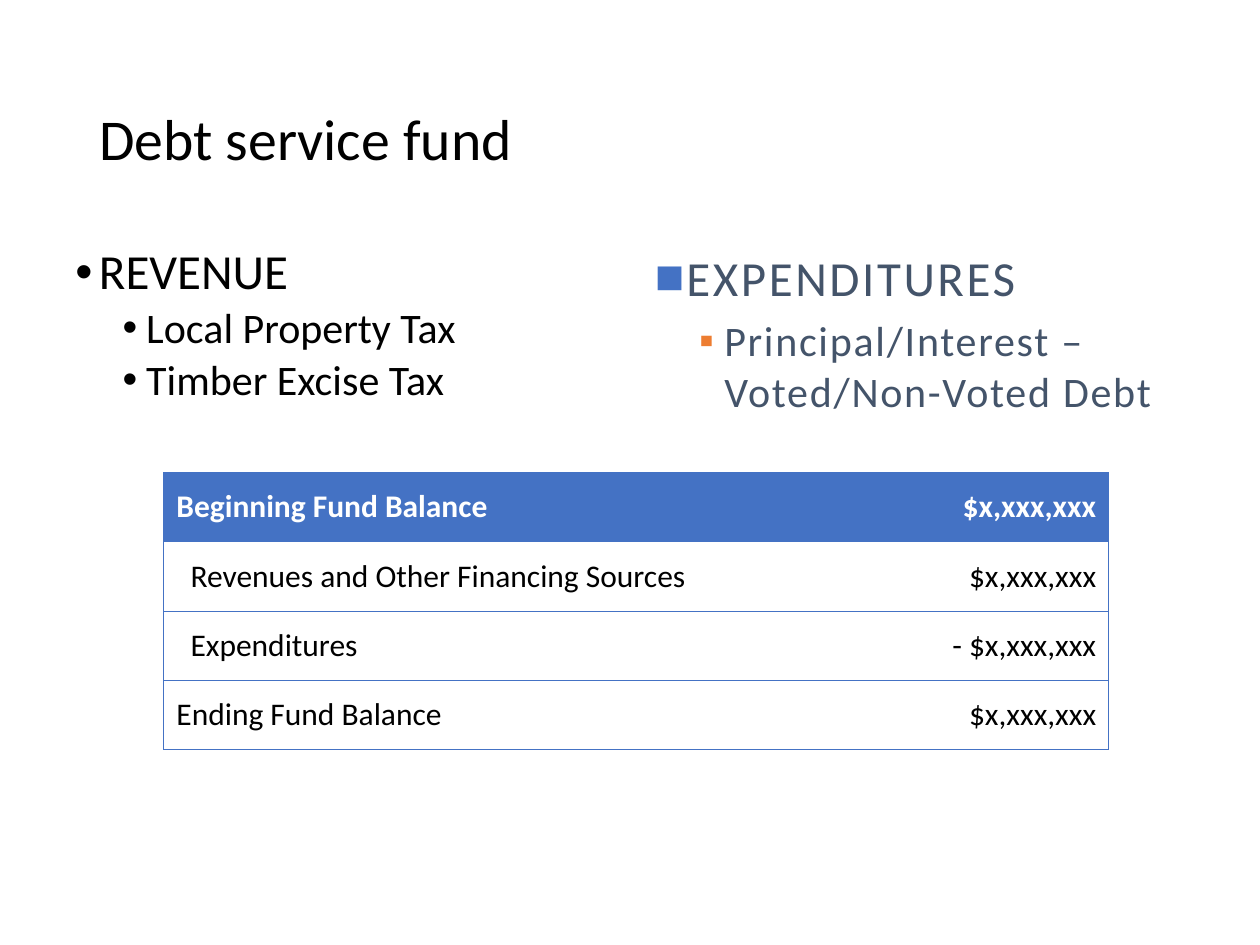
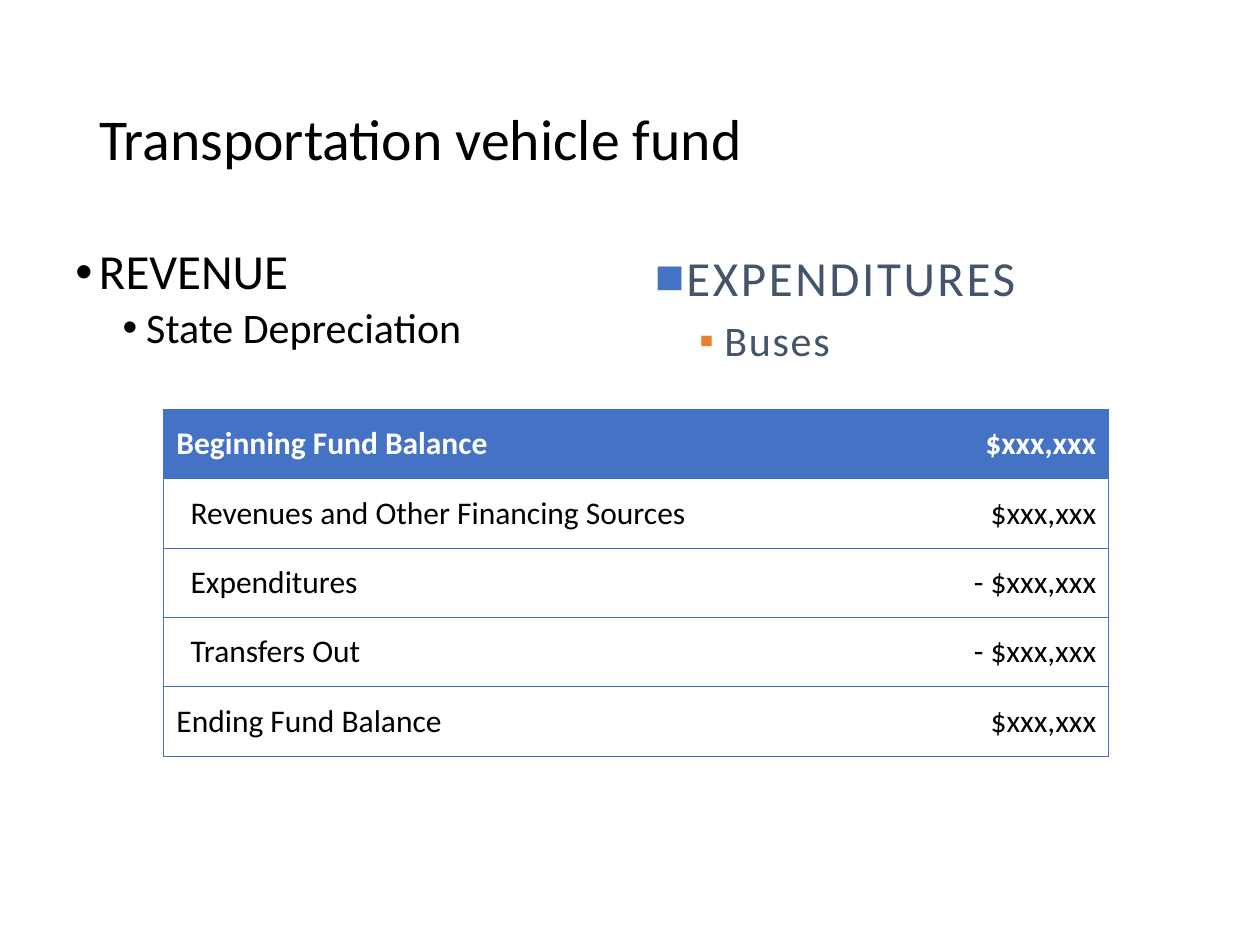
from lxml.etree import SubElement
from pptx import Presentation
from pptx.dml.color import RGBColor
from pptx.enum.text import MSO_ANCHOR, PP_ALIGN
from pptx.oxml.ns import qn
from pptx.util import Pt

BLACK = RGBColor(0x00, 0x00, 0x00)
WHITE = RGBColor(0xFF, 0xFF, 0xFF)
BLUE = RGBColor(0x44, 0x72, 0xC4)
ORANGE = RGBColor(0xED, 0x7D, 0x31)
SLATE = RGBColor(0x44, 0x54, 0x6A)
FONT = "Calibri"

ROW_HEIGHT = 39.6
COLUMN_WIDTHS = (342, 198)
CELL_MARGIN = 7.2
ROW_INDENT = 8.1

# fields: left, text colour, line spacing, then per level:
COLUMN_STYLES = (
    (36, BLACK, 0.9, (
        (28, 13.5, 13.5, 7.5, "•", BLACK, 0),
        (24, 40.5, 13.5, 3.8, "•", BLACK, 0),
    )),
    (363.6, SLATE, 1.0, (
        (28, 21.6, 18, 5.6, "■", BLUE, 150),
        (24, 43.2, 14.4, 4.8, "▪", ORANGE, 100),
    )),
)

FUNDS = (
    ("Debt service fund", 270, "$x,xxx,xxx",
     ("Local Property Tax", "Timber Excise Tax"),
     ("Principal/Interest – Voted/Non-Voted Debt",),
     ("Expenditures",)),
    ("Transportation vehicle fund", 234, "$xxx,xxx",
     ("State Depreciation",),
     ("Buses",),
     ("Expenditures", "Transfers Out")),
)


def add_run(paragraph, text, size, color, bold=False):
    run = paragraph.add_run()
    run.text = text
    run.font.name = FONT
    run.font.size = Pt(size)
    run.font.bold = bold
    run.font.color.rgb = color
    return run


def add_border(cell, side, color):
    line = SubElement(cell._tc.get_or_add_tcPr(), qn(f"a:{side}"), w=str(Pt(0.5)))
    if color is None:
        SubElement(line, qn("a:noFill"))
    else:
        fill = SubElement(line, qn("a:solidFill"))
        SubElement(fill, qn("a:srgbClr"), val=str(color))


presentation = Presentation()
presentation.slide_width = Pt(720)
presentation.slide_height = Pt(540)

for fund, table_top, amount, revenues, expenditures, deductions in FUNDS:
    slide = presentation.slides.add_slide(presentation.slide_layouts[5])
    title = slide.shapes.title
    title.left, title.top, title.width, title.height = Pt(49.5), Pt(28.8), Pt(621), Pt(104.4)
    title.text_frame.vertical_anchor = MSO_ANCHOR.MIDDLE
    paragraph = title.text_frame.paragraphs[0]
    paragraph.alignment = PP_ALIGN.LEFT
    paragraph.line_spacing = 0.9
    add_run(paragraph, fund, 33, BLACK)

    lists = (("REVENUE", *revenues), ("EXPENDITURES", *expenditures))
    for (left, color, line_spacing, levels), items in zip(COLUMN_STYLES, lists):
        box = slide.shapes.add_textbox(Pt(left), Pt(138), Pt(318), Pt(114))
        frame = box.text_frame
        frame.word_wrap = True
        for index, item in enumerate(items):
            level = min(index, 1)
            size, indent, hanging, space_before, bullet, bullet_color, tracking = levels[level]
            paragraph = frame.add_paragraph() if index else frame.paragraphs[0]
            paragraph.level = level
            paragraph.line_spacing = line_spacing
            paragraph.space_before = Pt(space_before)
            properties = paragraph._p.get_or_add_pPr()
            properties.set("marL", str(Pt(indent)))
            properties.set("indent", str(-Pt(hanging)))
            bullet_fill = SubElement(properties, qn("a:buClr"))
            SubElement(bullet_fill, qn("a:srgbClr"), val=str(bullet_color))
            SubElement(properties, qn("a:buFont"), typeface="Arial")
            SubElement(properties, qn("a:buChar"), char=bullet)
            run = add_run(paragraph, item, size, color)
            run.font._element.set("spc", str(tracking))

    rows = [("Beginning Fund Balance", amount, 0),
            ("Revenues and Other Financing Sources", amount, ROW_INDENT)]
    rows += [(label, f"- {amount}", ROW_INDENT) for label in deductions]
    rows.append(("Ending Fund Balance", amount, 0))

    table = slide.shapes.add_table(
        len(rows), 2, Pt(93.6), Pt(table_top),
        Pt(sum(COLUMN_WIDTHS)), Pt(ROW_HEIGHT * len(rows))).table
    table.horz_banding = False
    for column, width in zip(table.columns, COLUMN_WIDTHS):
        column.width = Pt(width)
    for row_index, (label, value, indent) in enumerate(rows):
        table.rows[row_index].height = Pt(ROW_HEIGHT)
        is_header = row_index == 0
        for column_index, text in enumerate((label, value)):
            is_value = column_index == 1
            cell = table.cell(row_index, column_index)
            cell.vertical_anchor = MSO_ANCHOR.MIDDLE
            cell.margin_left = Pt(CELL_MARGIN if is_value else CELL_MARGIN + indent)
            add_border(cell, "lnL", None if is_value else BLUE)
            add_border(cell, "lnR", BLUE if is_value else None)
            add_border(cell, "lnT", BLUE)
            add_border(cell, "lnB", BLUE)
            if is_header:
                cell.fill.solid()
                cell.fill.fore_color.rgb = BLUE
            else:
                cell.fill.background()
            paragraph = cell.text_frame.paragraphs[0]
            paragraph.alignment = PP_ALIGN.RIGHT if is_value else PP_ALIGN.LEFT
            add_run(paragraph, text, 18, WHITE if is_header else BLACK, is_header)

presentation.save("out.pptx")
